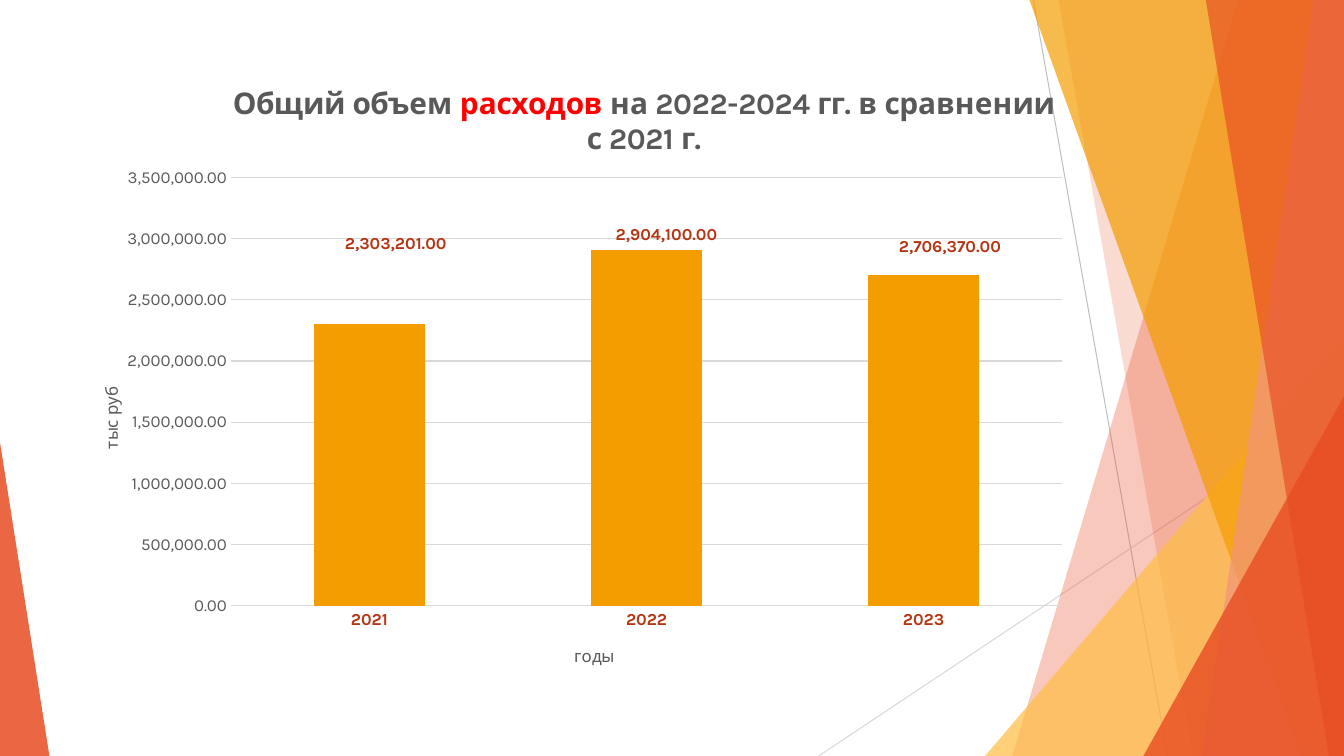
from lxml import etree
from pptx import Presentation
from pptx.chart.data import CategoryChartData
from pptx.dml.color import RGBColor
from pptx.enum.chart import XL_CHART_TYPE, XL_TICK_MARK
from pptx.enum.shapes import MSO_CONNECTOR, MSO_SHAPE
from pptx.oxml.ns import qn
from pptx.util import Inches, Pt

COLUMN = XL_CHART_TYPE.COLUMN_STACKED
NO_TICK = XL_TICK_MARK.NONE
TRIANGLE = MSO_SHAPE.ISOSCELES_TRIANGLE
STRAIGHT = MSO_CONNECTOR.STRAIGHT

# Content
FONT = "Karla"
W, H = 13.33, 7.5
GREY, RUST, RED, AMBER = "595959", "B53513", "FF0000", "F49D00"
TITLE = [("Общий объем ", GREY), ("расходов", RED),
         (" на 2022-2024 гг. в сравнении с 2021 г.", GREY)]
YEARS = ["2021", "2022", "2023"]
EXPENSES = [2303201, 2904100, 2706370]
LABEL_SHIFTS = [(0.025, -0.37), (0.019, -0.324), (0.025, -0.323)]

# Thin lines: x1, y1, x2, y2, colour
LINES = [(10.25, 0, 11.58, H, "BFBFBF"), (W, 4.03, 8.12, H, "D9D9D9")]
# Bands reach the right edge: top-left x, bottom-left x, colour, opacity %
# Triangles stand on the bottom edge: left, top, width, apex, colour, opacity %
DECOR = [
    ("band", 12.28, 10.04, "E84C22", 30),
    ("band", 10.5, 11.83, "E84C22", 20),
    ("triangle", 9.77, 3.33, 3.56, 1, "FFBD47", 72),
    ("band", 10.21, 12.91, AMBER, 70),
    ("band", 13.03, 11.92, "F1947A", 70),
    ("band", 11.96, 13.18, "E84C22", 65),
    ("triangle", 11.34, 3.93, 1.99, 1, "E84C22", 80),
    ("triangle", 0, 4.39, 0.49, 0, "E84C22", 85),
]


def rgb(color):
    return RGBColor.from_string(color)


def fill(sp, color, opacity):
    sp.shadow.inherit = False
    sp.fill.solid()
    sp.fill.fore_color.rgb = rgb(color)
    sp.line.fill.background()
    clr = sp.fill._xPr.find(".//" + qn("a:srgbClr"))
    etree.SubElement(clr, qn("a:alpha"), val=str(opacity * 1000))


def style(font, size, color, bold=False):
    font.name, font.size, font.bold = FONT, Pt(size), bold
    font.color.rgb = rgb(color)


def place(parent, index, **values):
    """Give a chart part a manual layout."""
    layout = parent.find(qn("c:layout"))
    if layout is None:
        layout = etree.Element(qn("c:layout"))
        parent.insert(index, layout)
    manual = etree.SubElement(layout, qn("c:manualLayout"))
    for tag, value in values.items():
        etree.SubElement(manual, qn("c:" + tag), val=str(value))


def add_title(title, runs, size, bold, x, y):
    p = title.text_frame.paragraphs[0]
    for text, color in runs:
        r = p.add_run()
        r.text = text
        style(r.font, size, color, bold)
    place(title._element, 1, xMode="edge", yMode="edge", x=x, y=y)


prs = Presentation()
prs.slide_width, prs.slide_height = Inches(W), Inches(H)
s = prs.slides.add_slide(prs.slide_layouts[6])

# Background lines
for x1, y1, x2, y2, color in LINES:
    line = s.shapes.add_connector(STRAIGHT, Inches(x1), Inches(y1), Inches(x2), Inches(y2))
    line.line.color.rgb = rgb(color)
    line.line.width = Pt(0.75)
    etree.SubElement(line._element.spPr, qn("a:effectLst"))

# Translucent facets
for kind, *geometry, color, opacity in DECOR:
    if kind == "band":
        top_x, bottom_x = geometry
        builder = s.shapes.build_freeform(Inches(top_x), 0)
        corners = [(W, 0), (W, H), (bottom_x, H)]
        builder.add_line_segments([(Inches(x), Inches(y)) for x, y in corners])
        sp = builder.convert_to_shape()
    else:
        left, top, width, apex = geometry
        sp = s.shapes.add_shape(TRIANGLE, Inches(left), Inches(top), Inches(width), Inches(H - top))
        sp.adjustments[0] = apex
    fill(sp, color, opacity)

# Expense chart
data = CategoryChartData(number_format="#,##0.00")
data.categories = YEARS
data.add_series("".join(text for text, _ in TITLE), EXPENSES)
chart = s.shapes.add_chart(COLUMN, Inches(0.42), Inches(0.79), Inches(10.45), Inches(5.93), data).chart
style(chart.font, 10, "000000")
chart.has_legend = False
add_title(chart.chart_title, TITLE, 21.3, True, 0.178, 0.005)
place(chart._chartSpace.find(".//" + qn("c:plotArea")), 0, layoutTarget="inner",
      xMode="edge", yMode="edge", x=0.179, y=0.164, w=0.789, h=0.716)

# Columns and their labels
plot = chart.plots[0]
plot.gap_width, plot.overlap, plot.vary_by_categories = 150, 100, False
series = plot.series[0]
series.format.fill.solid()
series.format.fill.fore_color.rgb = rgb(AMBER)
labels = series.data_labels
labels.show_value = True
style(labels.font, 12, RUST, True)
for i, (dx, dy) in enumerate(LABEL_SHIFTS):
    style(series.points[i].data_label.font, 12, RUST, True)
    place(labels._element.findall(qn("c:dLbl"))[i], 1, x=dx, y=dy)

# Moved labels stand without leader lines
for leader in labels._element.findall(qn("c:showLeaderLines")):
    labels._element.remove(leader)
etree.SubElement(labels._element, qn("c:showLeaderLines"), val="0")

# Axes
years, amounts = chart.category_axis, chart.value_axis
for axis, name, color, bold, x, y in [(years, "годы", RUST, True, 0.502, 0.94),
                                      (amounts, "тыс руб", GREY, False, 0.052, 0.508)]:
    axis.major_tick_mark = axis.minor_tick_mark = NO_TICK
    style(axis.tick_labels.font, 12, color, bold)
    add_title(axis.axis_title, [(name, GREY)], 12, False, x, y)
body = amounts.axis_title.text_frame._txBody.bodyPr
body.set("rot", "-5400000")
body.set("vert", "horz")
years.format.line.color.rgb = rgb("D9D9D9")
years.format.line.width = Pt(1)
amounts.format.line.fill.background()
amounts.minimum_scale, amounts.maximum_scale, amounts.major_unit = 0, 3500000, 500000
amounts.tick_labels.number_format = "#,##0.00"
amounts.tick_labels.number_format_is_linked = False
amounts.major_gridlines.format.line.color.rgb = rgb("D9D9D9")
amounts.major_gridlines.format.line.width = Pt(0.75)

prs.save("out.pptx")
